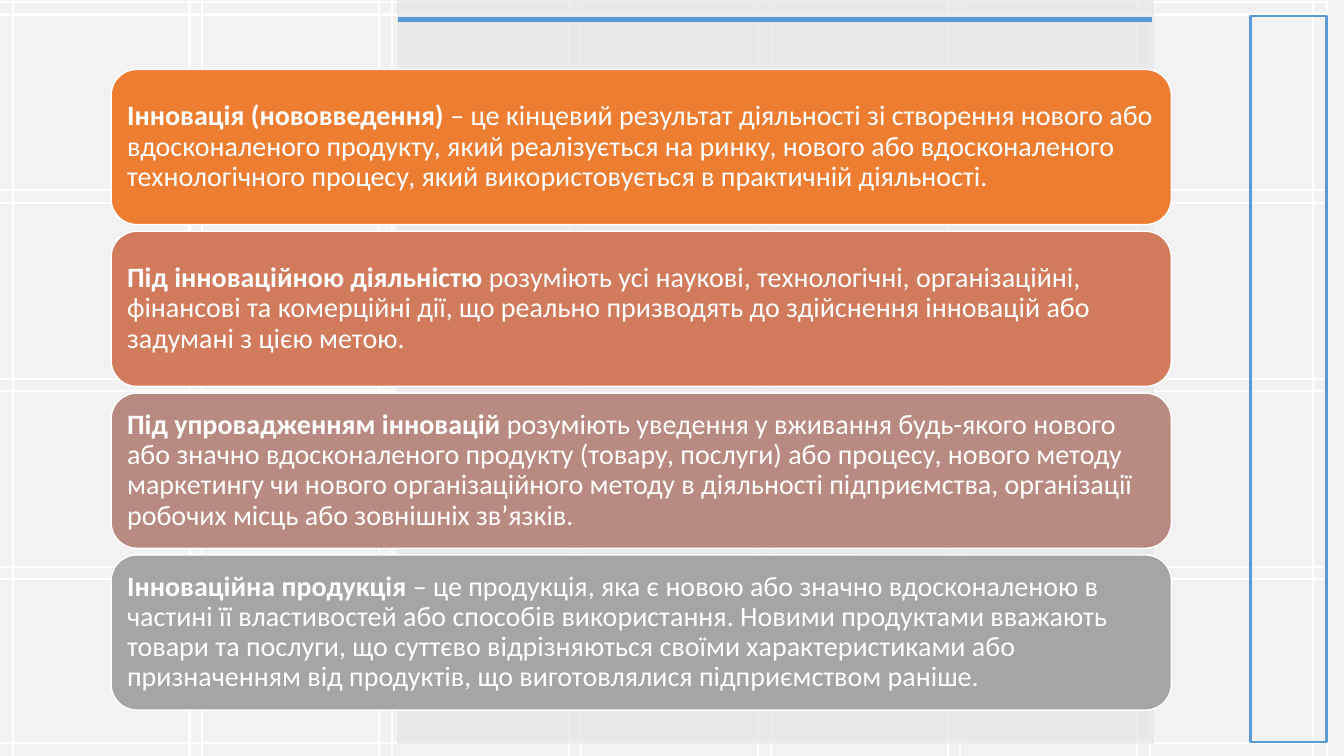
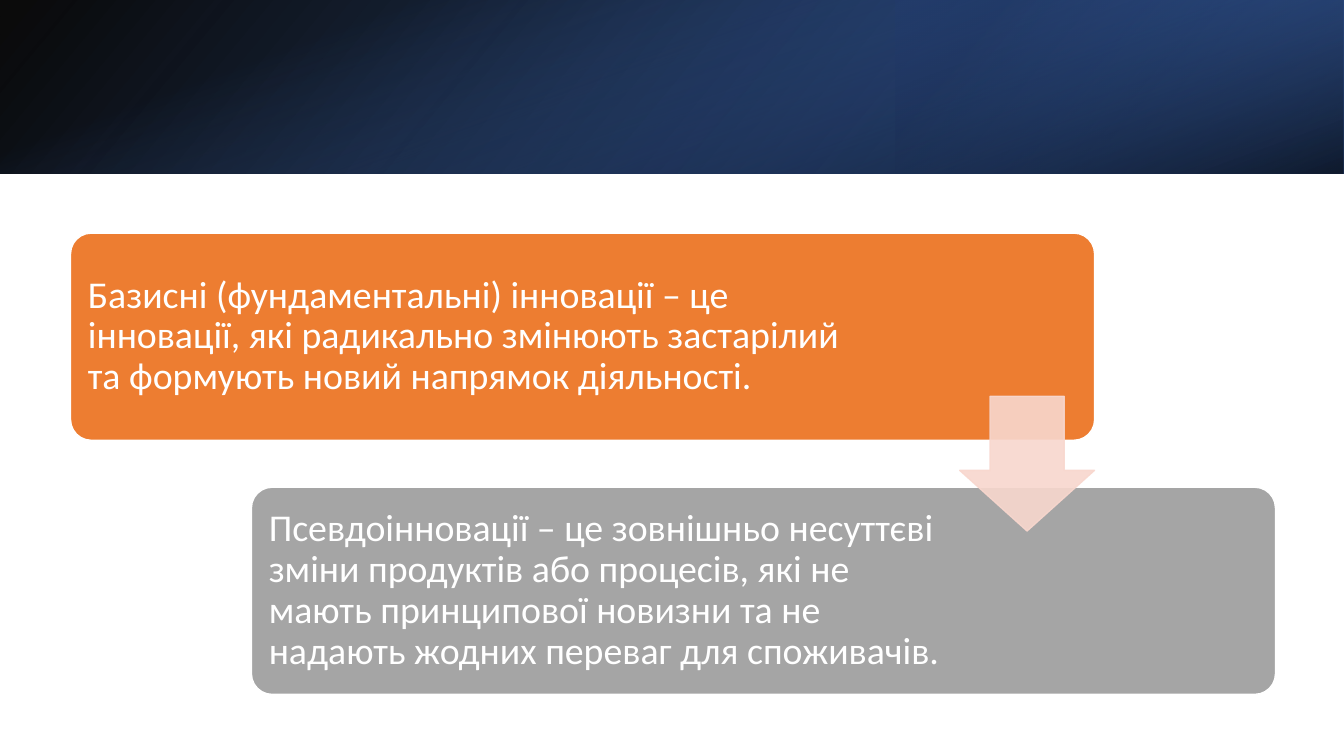
from pptx import Presentation
from pptx.dml.color import RGBColor
from pptx.enum.shapes import MSO_CONNECTOR, MSO_SHAPE
from pptx.enum.text import MSO_ANCHOR, PP_ALIGN
from pptx.oxml.ns import qn
from pptx.util import Pt
from lxml.etree import SubElement

HUES = {
    "white": "FFFFFF", "pale": "F2F2F2", "mist": "E7E6E6", "sky": "5B9BD5",
    "orange": "ED7D31", "clay": "D17B5C", "rose": "B98A82", "gray": "A5A5A5",
    "blush": "F8D7CE", "black": "000000", "deep": "2F5597", "navy": "203864",
    "blue": "4472C4",
}
WIDE, HIGH = 960, 540

TERMS = [
    ("orange", "Інновація (нововведення) ",
     "– це кінцевий результат діяльності зі створення нового або вдосконаленого "
     "продукту, який реалізується на ринку, нового або вдосконаленого "
     "технологічного процесу, який використовується в практичній діяльності."),
    ("clay", "Під інноваційною діяльністю ",
     "розуміють усі наукові, технологічні, організаційні, фінансові та комерційні "
     "дії, що реально призводять до здійснення інновацій або задумані з цією метою."),
    ("rose", "Під упровадженням інновацій ",
     "розуміють уведення у вживання будь-якого нового або значно вдосконаленого "
     "продукту (товару, послуги) або процесу, нового методу маркетингу чи нового "
     "організаційного методу в діяльності підприємства, організації робочих місць "
     "або зовнішніх зв’язків."),
    ("gray", "Інноваційна продукція ",
     "– це продукція, яка є новою або значно вдосконаленою в частині її "
     "властивостей або способів використання. Новими продуктами вважають товари "
     "та послуги, що суттєво відрізняються своїми характеристиками або "
     "призначенням від продуктів, що виготовлялися підприємством раніше."),
]

KINDS = [
    ("orange", 153,
     "Базисні (фундаментальні) інновації – це інновації, які радикально змінюють "
     "застарілий та формують новий напрямок діяльності."),
    ("gray", 234,
     "Псевдоінновації – це зовнішньо несуттєві зміни продуктів або процесів, які "
     "не мають принципової новизни та не надають жодних переваг для споживачів."),
]


class Deck:
    """Hold the shared style and the current slide."""

    font = "Calibri"

    def __init__(self):
        self.show = Presentation()
        self.show.slide_width, self.show.slide_height = Pt(WIDE), Pt(HIGH)
        self.slide = None

    def page(self):
        self.slide = self.show.slides.add_slide(self.show.slide_layouts[6])

    def tint(self, color, name):
        color.rgb = RGBColor.from_string(HUES[name])

    def fade(self, shape, *rates):
        marks = shape.element.spPr.iter(qn("a:srgbClr"))
        for mark, rate in zip(marks, rates):
            SubElement(mark, qn("a:alpha")).set("val", str(rate * 1000))

    def shape(self, kind, box, fill=None, edge=None, width=1, bends=()):
        form = self.slide.shapes.add_shape(kind, *map(Pt, box))
        form.shadow.inherit = False
        for spot, bend in enumerate(bends):
            form.adjustments[spot] = bend
        if fill:
            form.fill.solid()
            self.tint(form.fill.fore_color, fill)
        else:
            form.fill.background()
        if edge:
            self.tint(form.line.color, edge)
            form.line.width = Pt(width)
        else:
            form.line.fill.background()
        return form

    def blend(self, box, angle, *stops):
        form = self.shape(MSO_SHAPE.RECTANGLE, box)
        form.fill.gradient()
        form.fill.gradient_angle = 360 - angle
        for stop, (place, hue, rate) in zip(form.fill.gradient_stops, stops):
            stop.position = place
            self.tint(stop.color, hue)
        self.fade(form, *(rate for place, hue, rate in stops))

    def line(self, ends, hue, width):
        wire = self.slide.shapes.add_connector(MSO_CONNECTOR.STRAIGHT, *map(Pt, ends))
        self.tint(wire.line.color, hue)
        wire.line.width = Pt(width)
        SubElement(wire.element.spPr, qn("a:effectLst"))

    def card(self, box, fill, runs, size, inset, right=None, bends=()):
        form = self.shape(MSO_SHAPE.ROUNDED_RECTANGLE, box, fill, "white", bends=bends)
        frame = form.text_frame
        frame.word_wrap = True
        frame.vertical_anchor = MSO_ANCHOR.MIDDLE
        frame.margin_left = frame.margin_top = frame.margin_bottom = Pt(inset)
        frame.margin_right = Pt(right or inset)
        para = frame.paragraphs[0]
        para.alignment = PP_ALIGN.LEFT
        para.line_spacing = 0.9
        for text, bold in runs:
            run = para.add_run()
            run.text = text
            run.font.name, run.font.size, run.font.bold = self.font, Pt(size), bold
            self.tint(run.font.color, "white")

    def grid(self):
        step, gap, edge = 135.4, 9, 948
        cols = [n * step for n in range(1, 8)]
        cols += [n * step + gap for n in range(7)] + [938.2]
        rows = [1.4 + n * 134.5 + side for n in range(4) for side in (0, gap)]
        for x in cols:
            self.line((x, 0, x, HIGH), "white", 1.5)
        for y in rows + [530.6]:
            self.line((0, y, edge, y), "white", 1.5)


def terms(deck):
    deck.page()
    rect = MSO_SHAPE.RECTANGLE
    deck.shape(rect, (0, 0, WIDE, HIGH), "pale")
    deck.grid()
    deck.fade(deck.shape(rect, (283.7, -0.5, 540.5, 532), "mist"), 70)
    deck.line((284.4, 14, 822.6, 14), "sky", 4)
    deck.shape(rect, (893.2, 11.5, 54.5, 518.5), edge="sky", width=2)
    for n, (hue, head, text) in enumerate(TERMS):
        box = (79.4, 49.6 + n * 115.6, 757.3, 110.8)
        deck.card(box, hue, [(head, True), (text, False)], 20, 6)


def kinds(deck):
    deck.page()
    band = 124
    deck.blend((0, 0, WIDE, band), 40, (0, "black", 96), (1, "deep", 100))
    deck.blend((640, 0, 320, band), 40, (0.19, "navy", 68), (1, "blue", 79))
    deck.blend((0, 0, WIDE, band), 70, (0.23, "blue", 0), (0.99, "black", 74))
    for n, (hue, right, text) in enumerate(KINDS):
        box = (50.4 + n * 129.2, 166.5 + n * 181.5, 731.5, 148)
        deck.card(box, hue, [(text, False)], 27, 8.1, right, (0.1,))
    arrow = deck.shape(MSO_SHAPE.DOWN_ARROW, (685.5, 283, 96.3, 96.3),
                       "blush", "blush", bends=(0.55, 0.45))
    deck.fade(arrow, 90, 90)


def main():
    deck = Deck()
    terms(deck)
    kinds(deck)
    deck.show.save("out.pptx")


if __name__ == "__main__":
    main()
